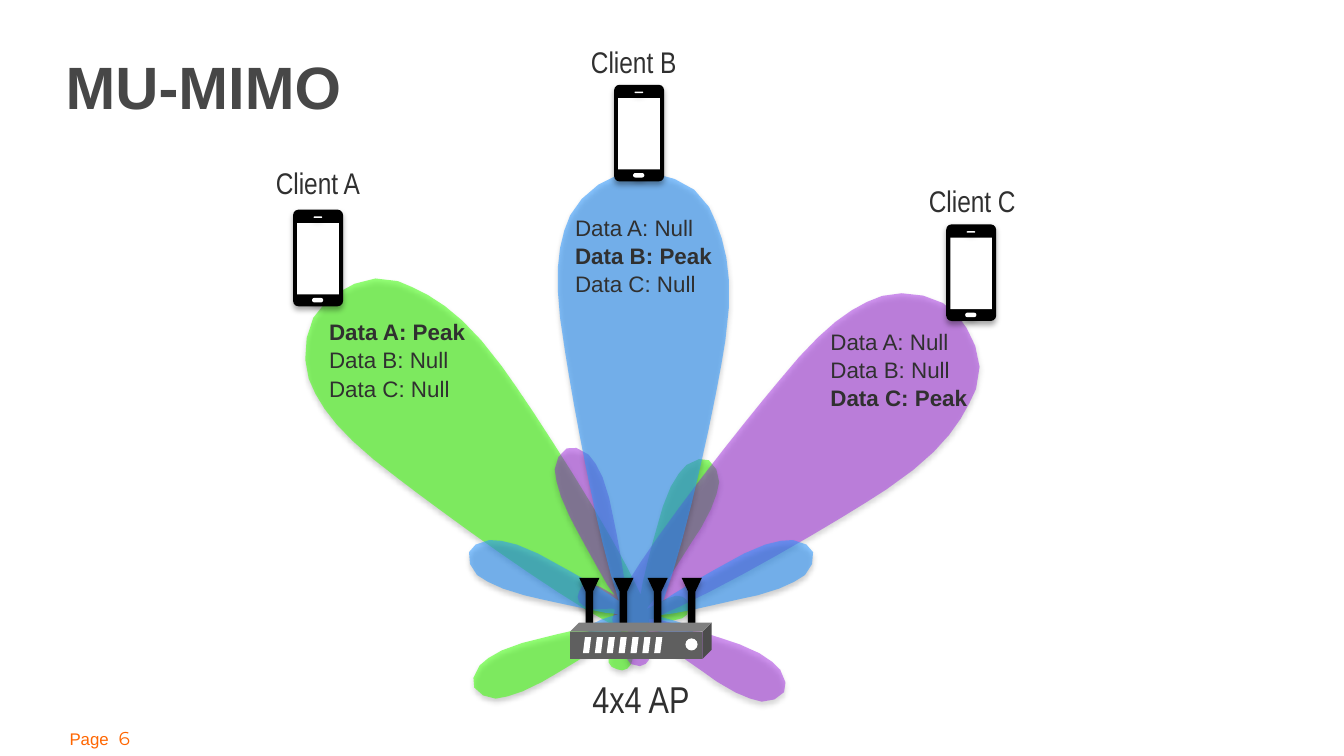
from math import dist, sqrt
from typing import NamedTuple

from lxml.etree import SubElement
from pptx import Presentation
from pptx.dml.color import RGBColor
from pptx.enum.shapes import MSO_SHAPE
from pptx.enum.text import PP_ALIGN
from pptx.oxml.ns import qn
from pptx.util import Pt

COLORS = {"text": "303030", "title": "474747", "page": "FF6600",
          "green": "3FFF0A", "purple": "9916DE", "blue": "2C97FF",
          "black": "000000", "white": "FFFFFF", "router": "5F5F5F"}


class Box(NamedTuple):
    x: float
    y: float
    w: float
    h: float


class Run(NamedTuple):
    text: str
    size: float
    color: str = "text"
    font: str = "Arial"
    bold: bool = False


class Lobe(NamedTuple):
    box: Box
    color: str
    opacity: int
    angle: float


class Client(NamedTuple):
    name: str
    label: tuple[float, float]
    phone: tuple[float, float]
    data: Box


class Part(NamedTuple):
    kind: MSO_SHAPE
    box: Box
    color: str
    corner: float | None


# Antenna pattern in hundredths of an inch: 2 numbers a line, 6 a Bezier curve
OUTLINE_UNIT = Pt(0.72)
OUTLINE_START = (475, 128)
OUTLINE = [
    (487, 128, 516, 133, 527, 154), (537, 175, 547, 200, 539, 253),
    (533, 293, 511, 398, 493, 446), (492, 447), (499, 442),
    (516, 431, 542, 417, 553, 411), (571, 402, 581, 401, 589, 401),
    (598, 401, 602, 407, 604, 410), (606, 415, 602, 423, 598, 427),
    (591, 432, 582, 437, 563, 442), (547, 445, 505, 456, 489, 457),
    (488, 457), (491, 458), (497, 460, 503, 461, 505, 462),
    (511, 464, 514, 466, 515, 469), (516, 471, 516, 474, 514, 477),
    (513, 478, 510, 481, 508, 481), (505, 481, 502, 481, 497, 477),
    (495, 475, 490, 471, 487, 466), (484, 464), (480, 469),
    (479, 470, 478, 471, 476, 471), (474, 471, 471, 469, 469, 464),
    (468, 463), (466, 464), (462, 469, 458, 473, 456, 475),
    (451, 479, 448, 479, 445, 479), (442, 479, 440, 476, 439, 474),
    (437, 472, 437, 468, 438, 466), (439, 464, 442, 462, 447, 460),
    (449, 460, 451, 459, 453, 458), (460, 456), (450, 455),
    (430, 451, 402, 445, 390, 442), (371, 437, 362, 432, 355, 427),
    (351, 423, 347, 415, 349, 410), (351, 407, 355, 401, 364, 401),
    (372, 401, 382, 402, 400, 411), (411, 417, 437, 431, 454, 442),
    (461, 447), (460, 446), (444, 399, 426, 299, 420, 260),
    (411, 208, 414, 182, 424, 160), (432, 144, 455, 126, 475, 128),
]
LOBES = [
    Lobe(Box(176.4, 125.3, 175, 254.9), "green", 56, 315.9),
    Lobe(Box(331.2, 127.4, 175, 254.9), "purple", 46, 48.3),
    Lobe(Box(251.3, 92.2, 184.3, 254.9), "blue", 56, 0),
]
CLIENTS = [
    Client("A", (133.2, 83.5), (157, 112.3), Box(169.2, 166.3, 87.8, 51.1)),
    Client("B", (302.4, 18.7), (329, 45.4), Box(301, 110.2, 91.4, 51.1)),
    Client("C", (483.8, 93.6), (506.9, 120.2), Box(437.8, 171.4, 95.8, 51.1)),
]
PHONE = [
    Part(MSO_SHAPE.ROUNDED_RECTANGLE, Box(0, 0, 26.8, 51.8), "black", 0.108),
    Part(MSO_SHAPE.RECTANGLE, Box(2.2, 7.2, 22.3, 38.2), "white", None),
    Part(MSO_SHAPE.ROUNDED_RECTANGLE, Box(10.2, 47.3, 6, 2.4), "white", 0.5),
    Part(MSO_SHAPE.ROUNDED_RECTANGLE, Box(11, 3.7, 4.6, 0.8), "white", 0.5),
]


def rgb(name: str) -> RGBColor:
    return RGBColor.from_string(COLORS[name])


def add_text(shapes, box: Box, paras: list[list[Run]], align=PP_ALIGN.LEFT,
             wrap: bool = True, top: float = 3.6) -> None:
    tf = shapes.add_textbox(*map(Pt, box)).text_frame
    tf.word_wrap = wrap
    tf.margin_top = Pt(top)
    for i, runs in enumerate(paras):
        p = tf.paragraphs[0] if i == 0 else tf.add_paragraph()
        p.alignment, p.line_spacing = align, 1.05
        for run in runs:
            r = p.add_run()
            r.text = run.text
            fmt = {"name": run.font, "size": Pt(run.size), "bold": run.bold}
            for key, value in fmt.items():
                setattr(r.font, key, value)
            r.font.color.rgb = rgb(run.color)


def paint(sp, color: str, opacity: int = 100, shadow: bool = False) -> None:
    sp.fill.solid()
    sp.fill.fore_color.rgb = rgb(color)
    sp.line.fill.background()
    sp.shadow.inherit = False
    if opacity < 100:
        clr = sp._element.spPr.find(qn("a:solidFill"))[0]
        SubElement(clr, qn("a:alpha"), val=str(opacity * 1000))
    if shadow:
        effects = sp._element.spPr.find(qn("a:effectLst"))
        outer = SubElement(effects, qn("a:outerShdw"), blurRad=str(Pt(3.1)),
                           dist=str(Pt(1.8)), dir="5400000", rotWithShape="0")
        clr = SubElement(outer, qn("a:srgbClr"), val=COLORS["black"])
        SubElement(clr, qn("a:alpha"), val="35000")


def add_part(shapes, kind: MSO_SHAPE, box: Box, color: str,
             corner: float | None = None, shadow: bool = False) -> None:
    sp = shapes.add_shape(kind, *map(Pt, box))
    if corner is not None:
        sp.adjustments[0] = corner
    paint(sp, color, shadow=shadow)


def flatten(start: tuple, segments: list[tuple]) -> list[tuple]:
    """Turn lines and cubic curves into points, more of them on longer curves."""
    points = [start]
    for seg in segments:
        if len(seg) == 2:
            points.append(seg)
            continue
        ctrl = [points[-1], seg[:2], seg[2:4], seg[4:]]
        steps = max(1, round(sqrt(dist(ctrl[0], ctrl[3])) / 1.8))
        for n in range(1, steps + 1):
            t = n / steps
            weights = ((1 - t) ** 3, 3 * t * (1 - t) ** 2, 3 * t * t * (1 - t), t ** 3)
            points.append(tuple(sum(w * c[k] for w, c in zip(weights, ctrl))
                                for k in (0, 1)))
    return points


def add_outline(shapes, points: list[tuple], unit: int):
    first, *rest = [(x * unit, y * unit) for x, y in points]
    builder = shapes.build_freeform(*first)
    builder.add_line_segments(rest, close=True)
    return builder.convert_to_shape()


def add_lobe(shapes, lobe: Lobe) -> None:
    sp = add_outline(shapes, flatten(OUTLINE_START, OUTLINE), OUTLINE_UNIT)
    sp.left, sp.top, sp.width, sp.height = map(Pt, lobe.box)
    sp.rotation = lobe.angle
    paint(sp, lobe.color, lobe.opacity, shadow=True)


def add_access_point(shapes) -> None:
    for i in range(4):
        x, y = 310.3 + 18.3 * i, 309.6
        funnel = [(0, 0), (10.8, 0), (7.4, 7.2), (7.4, 27.4), (3.4, 27.4), (3.4, 7.2)]
        sp = add_outline(shapes, [(x + dx, y + dy) for dx, dy in funnel], Pt(1))
        paint(sp, "black", shadow=True)
    add_part(shapes, MSO_SHAPE.CUBE, Box(305.3, 333.6, 75.9, 19.4), "router")
    for i in range(7):
        add_part(shapes, MSO_SHAPE.PARALLELOGRAM,
                 Box(312.3 + 6.36 * i, 341.3, 4.4, 8.6), "white")
    add_part(shapes, MSO_SHAPE.OVAL, Box(367.2, 342, 6.5, 6.5), "white")


def add_phone(shapes, x: float, y: float) -> None:
    for part in PHONE:
        box = part.box._replace(x=x + part.box.x, y=y + part.box.y)
        add_part(shapes, part.kind, box, part.color, part.corner, shadow=True)


prs = Presentation()
prs.slide_width, prs.slide_height = Pt(720), Pt(405)
s = prs.slides.add_slide(prs.slide_layouts[6])

# Page number and title
add_text(s.shapes, Box(30.2, 385.2, 54.7, 19.4),
         [[Run("Page ", 9, "page"), Run(" ", 10, "page", bold=True),
           Run("6", 10, "page", "Montserrat")]], wrap=False)
add_text(s.shapes, Box(28.1, 19.4, 277.2, 40.3),
         [[Run("MU-MIMO", 32, "title", bold=True)]], top=5.5)

# Device labels
for c in CLIENTS:
    add_text(s.shapes, Box(*c.label, 74.2, 26.6),
             [[Run(f"Client {c.name}", 16, font="Arial Narrow")]], PP_ALIGN.CENTER)
add_text(s.shapes, Box(303.8, 357.8, 79.2, 31.7),
         [[Run("4x4 AP", 20, font="Arial Narrow")]], PP_ALIGN.CENTER)

# Beams, access point and phones
beams = s.shapes.add_group_shape().shapes
for lobe in LOBES:
    add_lobe(beams, lobe)
add_access_point(s.shapes.add_group_shape().shapes)
for c in CLIENTS:
    add_phone(s.shapes.add_group_shape().shapes, *c.phone)

# Signal seen by each client: a peak for its own data, a null for the rest
for c in CLIENTS:
    add_text(s.shapes, c.data,
             [[Run(f"Data {d}: {'Peak' if d == c.name else 'Null'}", 12,
                   bold=d == c.name)] for d in "ABC"])

prs.save("out.pptx")
